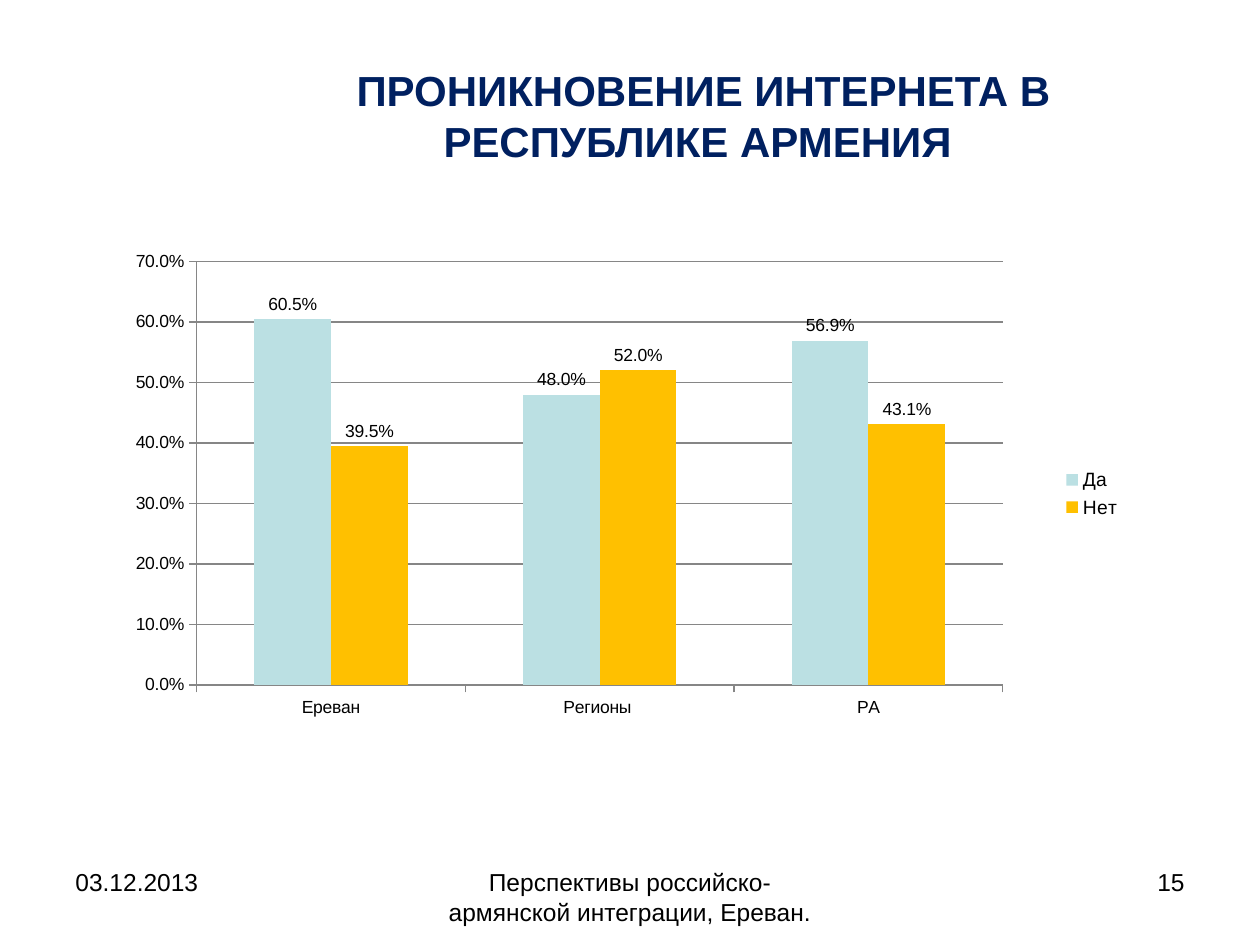
from dataclasses import dataclass

from lxml import etree
from pptx import Presentation
from pptx.chart import data
from pptx.dml.color import RGBColor
from pptx.enum import chart as ch, text as tx
from pptx.oxml import ns
from pptx.util import Pt


@dataclass(frozen=True)
class Theme:
    font: str = "Arial"
    ink: str = "000000"
    navy: str = "002060"
    grid: str = "868686"
    yes: str = "BBE0E3"
    no: str = "FFC000"
    head: int = 24
    foot: int = 14
    key: int = 11
    label: int = 10


THEME = Theme()
LEFT, MID, RIGHT = tx.PP_ALIGN.LEFT, tx.PP_ALIGN.CENTER, tx.PP_ALIGN.RIGHT


def rgb(code):
    return RGBColor.from_string(code)


def style(font, size, color=THEME.ink, bold=False):
    font.name = THEME.font
    font.size = Pt(size)
    font.bold = bold
    font.color.rgb = rgb(color)


def add_text(slide, box, words, align, size, color=THEME.ink, bold=False):
    frame = slide.shapes.add_textbox(*map(Pt, box)).text_frame
    frame.word_wrap = True
    para = frame.paragraphs[0]
    para.alignment = align
    run = para.add_run()
    run.text = words
    style(run.font, size, color, bold)
    return frame


def add_title(slide, box):
    frame = add_text(slide, box, "ПРОНИКНОВЕНИЕ ИНТЕРНЕТА В РЕСПУБЛИКЕ АРМЕНИЯ ",
                     MID, THEME.head, THEME.navy, True)
    frame.vertical_anchor = tx.MSO_ANCHOR.MIDDLE


def set_plot(chart, **sizes):
    """Fix the inner plot area as fractions of the chart."""
    area = chart._chartSpace.chart.plotArea
    for old in area.findall(ns.qn("c:layout")):
        area.remove(old)
    layout = etree.Element(ns.qn("c:layout"))
    manual = etree.SubElement(layout, ns.qn("c:manualLayout"))
    rules = dict(layoutTarget="inner", xMode="edge", yMode="edge", **sizes)
    for name, value in rules.items():
        etree.SubElement(manual, ns.qn(f"c:{name}"), val=str(value))
    area.insert(0, layout)


def add_chart(slide, box):
    table = data.CategoryChartData(number_format="0.0%")
    table.categories = ["Ереван", "Регионы ", "РА"]
    table.add_series("Да", (0.605, 0.48, 0.569))
    table.add_series("Нет", (0.395, 0.52, 0.431))
    chart = slide.shapes.add_chart(
        ch.XL_CHART_TYPE.COLUMN_CLUSTERED, *map(Pt, box), table).chart
    chart.has_title = False
    style(chart.font, THEME.label)
    set_plot(chart, x=0.07, y=0.04, w=0.8, h=0.84)

    # Columns and their labels
    plot = chart.plots[0]
    plot.vary_by_categories = False
    plot.gap_width = 150
    plot.overlap = 0
    for series, color in zip(plot.series, (THEME.yes, THEME.no)):
        series.format.fill.solid()
        series.format.fill.fore_color.rgb = rgb(color)
        labels = series.data_labels
        labels.show_value = True
        labels.number_format = "0.0%"
        labels.number_format_is_linked = False
        labels.position = ch.XL_LABEL_POSITION.OUTSIDE_END
        style(labels.font, THEME.label)

    # Axes and grid
    scale = chart.value_axis
    scale.minimum_scale, scale.maximum_scale, scale.major_unit = 0, 0.7, 0.1
    scale.has_major_gridlines = True
    scale.tick_labels.number_format = "0.0%"
    scale.tick_labels.number_format_is_linked = False
    for axis in (chart.category_axis, scale):
        axis.major_tick_mark = ch.XL_TICK_MARK.OUTSIDE
        style(axis.tick_labels.font, THEME.label)
    for part in (chart.category_axis, scale, scale.major_gridlines):
        part.format.line.color.rgb = rgb(THEME.grid)
        part.format.line.width = Pt(0.75)

    # Legend
    chart.has_legend = True
    chart.legend.position = ch.XL_LEGEND_POSITION.RIGHT
    chart.legend.include_in_layout = False
    style(chart.legend.font, THEME.key)


def add_footer(slide, box):
    x, y, wide, high = box
    side, mid = 168, 228
    parts = (
        (x, side, "03.12.2013", LEFT),
        (x + (wide - mid) / 2, mid,
         "Перспективы российско-армянской интеграции, Ереван.", MID),
        (x + wide - side, side, "15", RIGHT),
    )
    for left, width, words, align in parts:
        add_text(slide, (left, y, width, high), words, align, THEME.foot)


def main():
    deck = Presentation()
    deck.slide_width, deck.slide_height = Pt(720), Pt(540)
    slide = deck.slides.add_slide(deck.slide_layouts[6])
    add_footer(slide, (36, 492, 648, 37.5))
    add_chart(slide, (72, 138, 576, 288))
    add_title(slide, (144, 33, 516, 65.5))
    deck.save("out.pptx")


if __name__ == "__main__":
    main()
